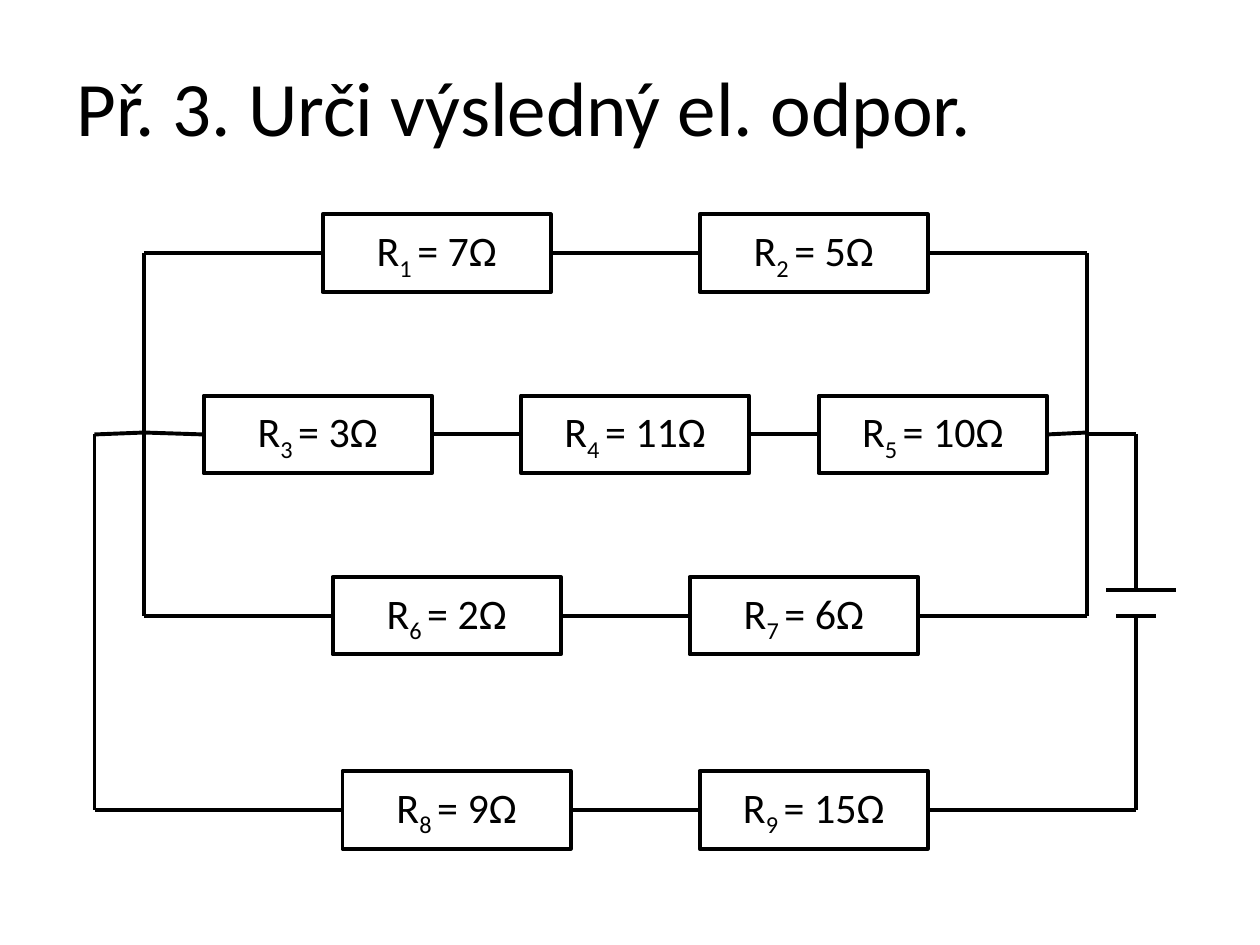
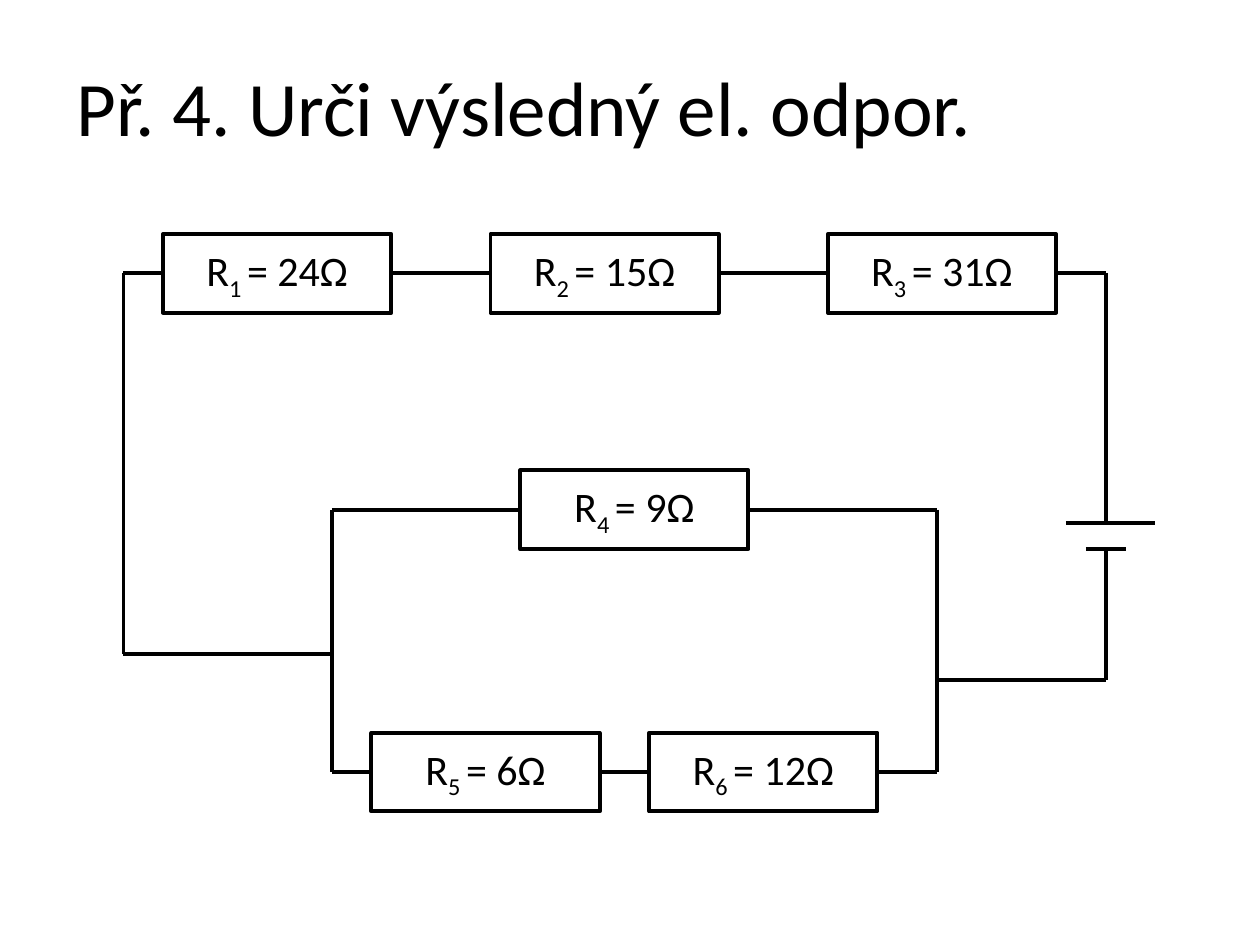
"""Build two slides with circuit diagrams for resistance exercises."""

from dataclasses import dataclass
from typing import NamedTuple

from pptx import Presentation
from pptx.dml.color import RGBColor
from pptx.enum.shapes import MSO_CONNECTOR, MSO_SHAPE
from pptx.enum.text import MSO_ANCHOR, PP_ALIGN
from pptx.oxml.ns import qn
from pptx.shapes.shapetree import GroupShapes
from pptx.util import Inches, Pt
from lxml.etree import SubElement

INK = RGBColor(0x00, 0x00, 0x00)
FONT_NAME = "Calibri"
TITLE_SIZE = Pt(44)
LABEL_SIZE = Pt(24)
LINE_WIDTH = Pt(2.25)
SLIDE_WIDTH = Inches(10)
SLIDE_HEIGHT = Inches(7.5)
TITLE_BOX = (Inches(0.51), Inches(0.29), Inches(9), Inches(1.09))
COLUMNS_PER_SLIDE = 127
RESISTOR_COLUMNS = 23
RESISTOR_ROWS = 6


class Resistor(NamedTuple):
    """A numbered resistor, placed by its left column."""

    number: int
    ohms: int
    column: int


class Wire(NamedTuple):
    """A straight wire between two grid points."""

    start_column: float
    start_row: float
    end_column: float
    end_row: float


class Branch(NamedTuple):
    """Resistors in series on one row, with wires out to both ends."""

    row: float
    end_row: float
    start: int
    end: int
    resistors: list[Resistor]


@dataclass(frozen=True)
class Grid:
    """A drawing grid whose origin is the circuit's top left corner."""

    left: float
    top: float
    rows_per_slide: int

    def x(self, column: float) -> int:
        """Return the horizontal position of a column."""
        return round(Inches(self.left) + column * SLIDE_WIDTH / COLUMNS_PER_SLIDE)

    def y(self, row: float) -> int:
        """Return the vertical position of a row."""
        return round(Inches(self.top) + row * SLIDE_HEIGHT / self.rows_per_slide)


@dataclass(frozen=True)
class Exercise:
    """One slide: a title and a circuit of branches, wires and a battery."""

    number: int
    grid: Grid
    branches: list[Branch]
    wires: list[Wire]
    battery_plates: list[Wire]


EXERCISES = [
    Exercise(
        number=3,
        grid=Grid(left=0.75, top=2.01, rows_per_slide=73),
        branches=[
            Branch(0, 0, 5, 100, [Resistor(1, 7, 23), Resistor(2, 5, 61)]),
            Branch(14, 13.85, 5, 100,
                   [Resistor(3, 3, 11), Resistor(4, 11, 43), Resistor(5, 10, 73)]),
            Branch(28, 28, 5, 100, [Resistor(6, 2, 24), Resistor(7, 6, 60)]),
            Branch(43, 43, 0, 105, [Resistor(8, 9, 25), Resistor(9, 15, 61)]),
        ],
        wires=[
            Wire(5, 0, 5, 28),
            Wire(100, 0, 100, 28),
            Wire(0, 14, 0, 43),
            Wire(0, 14, 5, 13.85),
            Wire(100, 14, 105, 14),
            Wire(105, 14, 105, 26),
            Wire(105, 28, 105, 43),
        ],
        battery_plates=[Wire(102, 26, 109, 26), Wire(103, 28, 107, 28)],
    ),
    Exercise(
        number=4,
        grid=Grid(left=0.98, top=2.17, rows_per_slide=72),
        branches=[
            Branch(0, 0, 0, 99,
                   [Resistor(1, 24, 4), Resistor(2, 15, 37), Resistor(3, 31, 71)]),
            Branch(18, 18, 21, 82, [Resistor(4, 9, 40)]),
            Branch(38, 38, 21, 82, [Resistor(5, 6, 25), Resistor(6, 12, 53)]),
        ],
        wires=[
            Wire(0, 0, 0, 29),
            Wire(0, 29, 21, 29),
            Wire(21, 18, 21, 38),
            Wire(82, 18, 82, 38),
            Wire(82, 31, 99, 31),
            Wire(99, 0, 99, 19),
            Wire(99, 21, 99, 31),
        ],
        battery_plates=[Wire(95, 19, 104, 19), Wire(97, 21, 101, 21)],
    ),
]


def draw_wire(shapes: GroupShapes, grid: Grid, wire: Wire) -> None:
    """Draw a straight black line without a shadow."""
    connector = shapes.add_connector(
        MSO_CONNECTOR.STRAIGHT,
        grid.x(wire.start_column), grid.y(wire.start_row),
        grid.x(wire.end_column), grid.y(wire.end_row),
    )
    connector.line.color.rgb = INK
    connector.line.width = LINE_WIDTH
    SubElement(connector._element.spPr, qn("a:effectLst"))


def draw_resistor(shapes: GroupShapes, grid: Grid, resistor: Resistor, row: float) -> None:
    """Draw a resistor box centred on a row, labelled with its resistance."""
    left, top = grid.x(resistor.column), grid.y(row - RESISTOR_ROWS / 2)
    right = grid.x(resistor.column + RESISTOR_COLUMNS)
    bottom = grid.y(row + RESISTOR_ROWS / 2)
    shape = shapes.add_shape(MSO_SHAPE.RECTANGLE, left, top, right - left, bottom - top)
    shape.shadow.inherit = False
    shape.fill.background()
    shape.line.color.rgb = INK
    shape.line.width = LINE_WIDTH
    shape.text_frame.vertical_anchor = MSO_ANCHOR.MIDDLE
    paragraph = shape.text_frame.paragraphs[0]
    paragraph.alignment = PP_ALIGN.CENTER
    paragraph.font.name = FONT_NAME
    paragraph.font.size = LABEL_SIZE
    paragraph.font.color.rgb = INK
    for text, baseline in (("R", 0), (f"{resistor.number} ", -25000), (f"= {resistor.ohms}Ω", 0)):
        run = paragraph.add_run()
        run.text = text
        run.font.color.rgb = INK
        run._r.get_or_add_rPr().set("baseline", str(baseline))


def draw_branch(shapes: GroupShapes, grid: Grid, branch: Branch) -> None:
    """Draw the resistors of a branch and the wires in the gaps between them."""
    row, end_row = branch.row, branch.end_row
    starts = [(branch.start, end_row)]
    ends = []
    for resistor in branch.resistors:
        draw_resistor(shapes, grid, resistor, row)
        ends.append((resistor.column, row))
        starts.append((resistor.column + RESISTOR_COLUMNS, row))
    ends.append((branch.end, end_row))
    for start, end in zip(starts, ends):
        draw_wire(shapes, grid, Wire(*start, *end))


def add_exercise(presentation: Presentation, exercise: Exercise) -> None:
    """Add a slide with the exercise's title and circuit."""
    slide = presentation.slides.add_slide(presentation.slide_layouts.get_by_name("Title Only"))
    title = slide.shapes.title
    title.left, title.top, title.width, title.height = TITLE_BOX
    title.text_frame.text = f"Př. {exercise.number}. Urči výsledný el. odpor."
    title.text_frame.vertical_anchor = MSO_ANCHOR.MIDDLE
    paragraph = title.text_frame.paragraphs[0]
    paragraph.alignment = PP_ALIGN.JUSTIFY
    paragraph.font.name = FONT_NAME
    paragraph.font.size = TITLE_SIZE
    paragraph.font.color.rgb = INK

    circuit = slide.shapes.add_group_shape().shapes
    for branch in exercise.branches:
        draw_branch(circuit, exercise.grid, branch)
    for wire in exercise.wires + exercise.battery_plates:
        draw_wire(circuit, exercise.grid, wire)


def main() -> None:
    """Build and save the presentation."""
    presentation = Presentation()
    presentation.slide_width = SLIDE_WIDTH
    presentation.slide_height = SLIDE_HEIGHT
    for exercise in EXERCISES:
        add_exercise(presentation, exercise)
    presentation.save("out.pptx")


if __name__ == "__main__":
    main()
